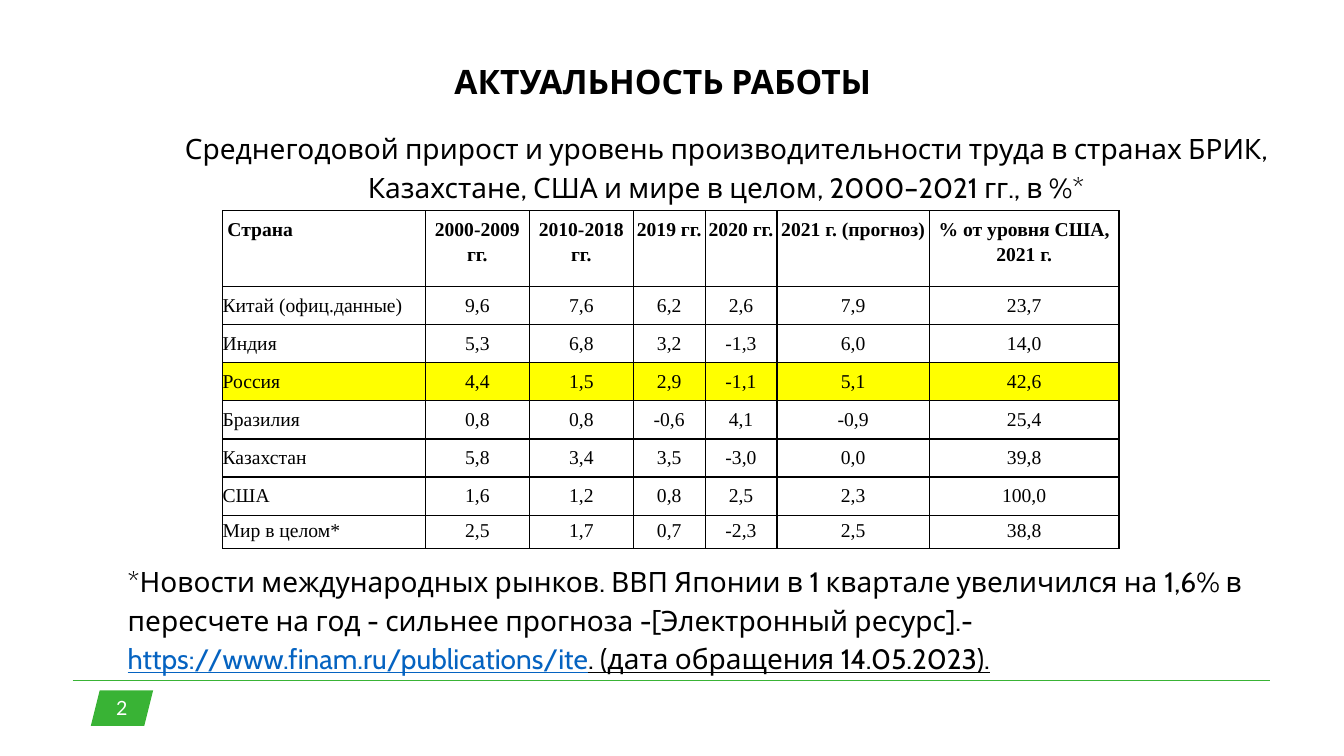
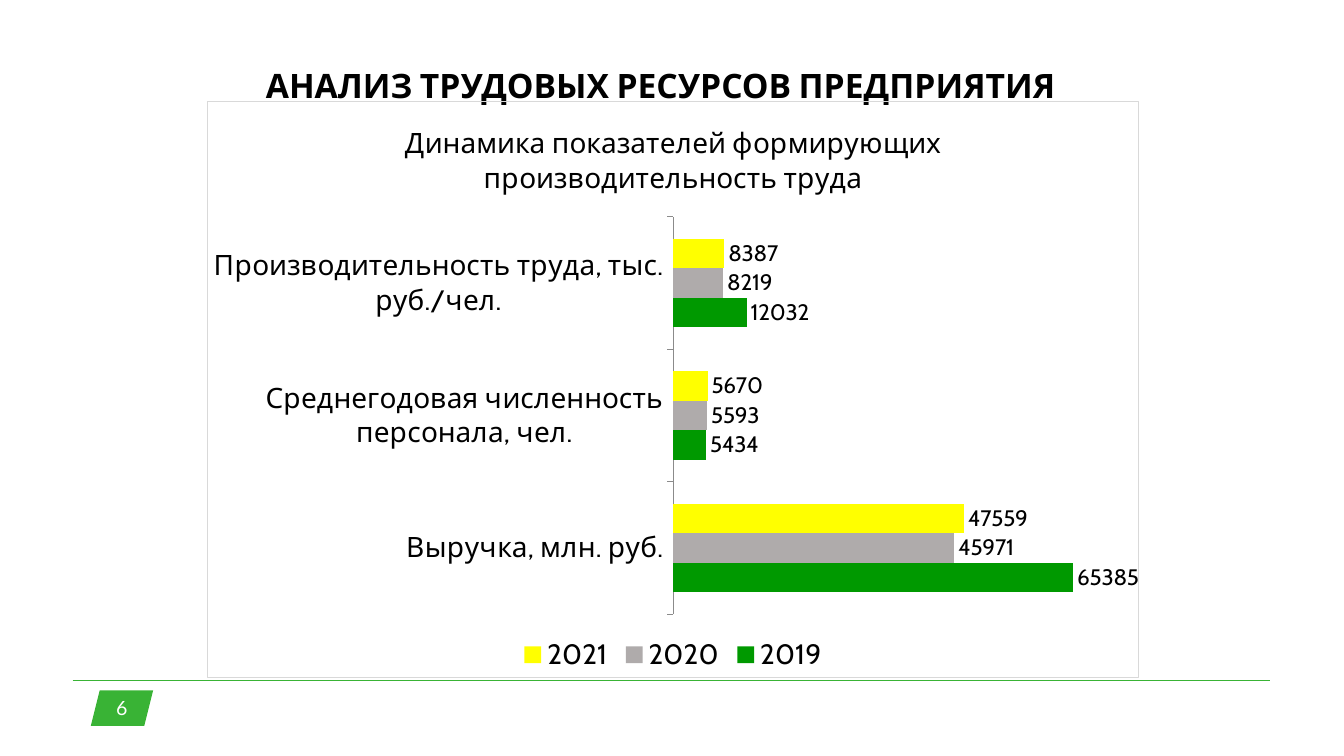
"""Build two slides on labour productivity: a country table and a company bar chart."""
import pptx
import pptx.chart.data
import pptx.dml.color
import pptx.enum.chart
import pptx.enum.shapes
import pptx.enum.text
import pptx.oxml
import pptx.oxml.ns
import pptx.util
from pptx.util import Cm

COLORS = {
    "black": "000000",
    "white": "FFFFFF",
    "green": "39B335",
    "yellow": "FFFF00",
    "link": "0563C1",
    "axis": "8B8B8B",
    "border": "D9D9D9",
    "bar_green": "009900",
    "bar_gray": "AFABAB",
}
FONT = "Cabin"
TABLE_FONT = "Times New Roman"
ALIGN = pptx.enum.text.PP_ALIGN

COLUMN_WIDTHS = [5.11, 2.62, 2.62, 1.81, 1.81, 3.84, 4.78]
ROW_HEIGHTS = [1.91] + [0.96] * 6 + [0.84]
HIGHLIGHTED_COUNTRY = "Россия"
COUNTRY_ROWS = [
    ["Страна", "2000-2009 гг.", "2010-2018 гг.", "2019 гг.", "2020 гг.",
     "2021 г. (прогноз)", "% от уровня США, 2021 г."],
    ["Китай (офиц.данные)", "9,6", "7,6", "6,2", "2,6", "7,9", "23,7"],
    ["Индия", "5,3", "6,8", "3,2", "-1,3", "6,0", "14,0"],
    ["Россия", "4,4", "1,5", "2,9", "-1,1", "5,1", "42,6"],
    ["Бразилия", "0,8", "0,8", "-0,6", "4,1", "-0,9", "25,4"],
    ["Казахстан", "5,8", "3,4", "3,5", "-3,0", "0,0", "39,8"],
    ["США", "1,6", "1,2", "0,8", "2,5", "2,3", "100,0"],
    ["Мир в целом*", "2,5", "1,7", "0,7", "-2,3", "2,5", "38,8"],
]
CATEGORIES = [
    "Выручка, млн. руб.",
    "Среднегодовая численность персонала, чел.",
    "Производительность труда, тыс. руб./чел.",
]
SERIES = [
    ("2019", [65385, 5434, 12032], "bar_green"),
    ("2020", [45971, 5593, 8219], "bar_gray"),
    ("2021", [47559, 5670, 8387], "yellow"),
]


def color(name):
    return pptx.dml.color.RGBColor.from_string(COLORS[name])


def set_font(font, size, name=FONT, tint="black", bold=False, underline=None):
    font.size = pptx.util.Pt(size)
    font.name = name
    font.color.rgb = color(tint)
    font.bold = bold
    font.underline = underline


def add_run(paragraph, text, **font_format):
    run = paragraph.add_run()
    run.text = text
    set_font(run.font, **font_format)


def add_text_box(slide, left, top, width, height, wrap=True):
    frame = slide.shapes.add_textbox(Cm(left), Cm(top), Cm(width), Cm(height)).text_frame
    frame.word_wrap = wrap
    frame.auto_size = pptx.enum.text.MSO_AUTO_SIZE.SHAPE_TO_FIT_TEXT
    return frame.paragraphs[0]


def add_indented_box(slide, left, top, width, height, align):
    paragraph = add_text_box(slide, left, top, width, height)
    paragraph.alignment = align
    paragraph.line_spacing = 1.15
    paragraph.space_after = pptx.util.Pt(10)
    paragraph._p.get_or_add_pPr().set("marL", str(Cm(1.27)))
    return paragraph


def add_title(slide, text, left, top, width):
    add_run(add_text_box(slide, left, top, width, 1.27, wrap=False), text, size=24, bold=True)


def add_footer(slide, number):
    badge = slide.shapes.add_shape(
        pptx.enum.shapes.MSO_SHAPE.PARALLELOGRAM, Cm(2.29), Cm(17.4), Cm(1.57), Cm(0.89))
    badge.shadow.inherit = False
    badge.fill.solid()
    badge.fill.fore_color.rgb = color("green")
    badge.line.fill.background()
    paragraph = add_text_box(slide, 2.36, 17.4, 1.42, 0.84)
    paragraph.alignment = ALIGN.CENTER
    add_run(paragraph, str(number), size=14, name="Lato", tint="white")
    rule = slide.shapes.add_connector(
        pptx.enum.shapes.MSO_CONNECTOR.STRAIGHT, Cm(1.83), Cm(17.15), Cm(32), Cm(17.15))
    rule.line.color.rgb = color("green")
    rule.line.width = pptx.util.Pt(0.75)
    rule._element.spPr.append(pptx.oxml.parse_xml(
        f"<a:effectLst {pptx.oxml.ns.nsdecls('a')}/>"))


def add_slide(presentation, number):
    slide = presentation.slides.add_slide(presentation.slide_layouts[6])
    add_footer(slide, number)
    return slide


def set_borders(cell):
    properties = cell._tc.get_or_add_tcPr()
    for position, side in enumerate(("lnL", "lnR", "lnT", "lnB")):
        properties.insert(position, pptx.oxml.parse_xml(
            f"<a:{side} {pptx.oxml.ns.nsdecls('a')} w='{pptx.util.Pt(0.96)}'>"
            f"<a:solidFill><a:srgbClr val='{COLORS['black']}'/></a:solidFill></a:{side}>"))


def fill_cell(cell, text, header, first, last, highlighted):
    cell.margin_left = Cm(0.12) if header and first else 0
    cell.margin_right = 0
    if highlighted:
        cell.fill.solid()
        cell.fill.fore_color.rgb = color("yellow")
    else:
        cell.fill.background()
    set_borders(cell)
    paragraph = cell.text_frame.paragraphs[0]
    paragraph.alignment = ALIGN.LEFT if first else ALIGN.CENTER
    paragraph.line_spacing = 1.0 if last else 1.15
    add_run(paragraph, text, size=14, name=TABLE_FONT, bold=header)


def add_country_table(slide):
    table = slide.shapes.add_table(
        len(ROW_HEIGHTS), len(COLUMN_WIDTHS), Cm(5.61), Cm(5.31),
        Cm(sum(COLUMN_WIDTHS)), Cm(sum(ROW_HEIGHTS))).table
    table.horz_banding = False
    table.first_row = False
    for column, width in zip(table.columns, COLUMN_WIDTHS):
        column.width = Cm(width)
    for row_index, (values, height) in enumerate(zip(COUNTRY_ROWS, ROW_HEIGHTS)):
        table.rows[row_index].height = Cm(height)
        for column_index, text in enumerate(values):
            fill_cell(
                table.cell(row_index, column_index), text,
                header=row_index == 0,
                first=column_index == 0,
                last=row_index == len(COUNTRY_ROWS) - 1,
                highlighted=values[0] == HIGHLIGHTED_COUNTRY)


def set_chart_frame(chart):
    namespaces = pptx.oxml.ns.nsdecls("c", "a")
    plot_area = chart._chartSpace.chart.plotArea
    for layout in plot_area.findall(pptx.oxml.ns.qn("c:layout")):
        plot_area.remove(layout)
    place = "".join(
        f"<c:{key} val='{value}'/>" for key, value in (
            ("layoutTarget", "inner"), ("xMode", "edge"), ("yMode", "edge"),
            ("x", 0.5), ("y", 0.2), ("w", 0.46), ("h", 0.69)))
    plot_area.insert(0, pptx.oxml.parse_xml(
        f"<c:layout {namespaces}><c:manualLayout>{place}</c:manualLayout></c:layout>"))
    white = f"<a:solidFill><a:srgbClr val='{COLORS['white']}'/></a:solidFill>"
    plot_area.append(pptx.oxml.parse_xml(f"<c:spPr {namespaces}>{white}</c:spPr>"))
    chart._chartSpace.chart.addnext(pptx.oxml.parse_xml(
        f"<c:spPr {namespaces}><a:noFill/><a:ln w='{pptx.util.Pt(0.75)}'><a:solidFill>"
        f"<a:srgbClr val='{COLORS['border']}'/></a:solidFill></a:ln></c:spPr>"))


def format_axes(chart):
    category_axis = chart.category_axis
    category_axis.major_tick_mark = pptx.enum.chart.XL_TICK_MARK.OUTSIDE
    category_axis.format.line.color.rgb = color("axis")
    category_axis.format.line.width = pptx.util.Pt(0.5)
    set_font(category_axis.tick_labels.font, 20)
    value_axis = chart.value_axis
    value_axis.minimum_scale = 0
    value_axis.maximum_scale = 70000
    value_axis.has_major_gridlines = False
    value_axis.visible = False


def format_series(series, tint):
    series.format.fill.solid()
    series.format.fill.fore_color.rgb = color(tint)
    labels = series.data_labels
    labels.show_value = True
    labels.position = pptx.enum.chart.XL_LABEL_POSITION.OUTSIDE_END
    set_font(labels.font, 16)


def add_bar_chart(slide, title):
    data = pptx.chart.data.CategoryChartData()
    data.categories = CATEGORIES
    for name, values, tint in SERIES:
        data.add_series(name, values)
    chart = slide.shapes.add_chart(
        pptx.enum.chart.XL_CHART_TYPE.BAR_CLUSTERED,
        Cm(5.21), Cm(2.54), Cm(23.5), Cm(14.55), data).chart
    set_font(chart.font, 10, name="Arial")
    chart.has_title = True
    add_run(chart.chart_title.text_frame.paragraphs[0], title, size=20)
    chart.has_legend = True
    chart.legend.position = pptx.enum.chart.XL_LEGEND_POSITION.BOTTOM
    chart.legend.include_in_layout = False
    set_font(chart.legend.font, 20)
    plot = chart.plots[0]
    plot.gap_width = 150
    plot.vary_by_categories = False
    for series, (name, values, tint) in zip(plot.series, SERIES):
        format_series(series, tint)
    format_axes(chart)
    set_chart_frame(chart)


def build_relevance_slide(presentation):
    slide = add_slide(presentation, 2)
    add_title(slide, "АКТУАЛЬНОСТЬ РАБОТЫ", 11.2, 1.4, 11.46)
    caption = add_indented_box(slide, 2.36, 3.07, 30.61, 2.18, ALIGN.CENTER)
    add_run(caption, "Среднегодовой прирост и уровень производительности труда в странах "
            "БРИК, Казахстане, США и мире в целом, 2000–2021 гг., в %*", size=20)
    add_country_table(slide)
    note = add_indented_box(slide, 1.7, 13.97, 30.61, 3.18, ALIGN.LEFT)
    add_run(note, "*Новости международных рынков. ВВП Японии в 1 квартале увеличился на 1,6% "
            "в пересчете на год - сильнее прогноза -[Электронный ресурс].- ", size=20)
    add_run(note, "https://www.finam.ru/publications/ite", size=20, tint="link", underline=True)
    add_run(note, ". (дата обращения 14.05.2023).", size=20, underline=True)


def build_resources_slide(presentation):
    slide = add_slide(presentation, 6)
    add_title(slide, "АНАЛИЗ ТРУДОВЫХ РЕСУРСОВ ПРЕДПРИЯТИЯ", 6.45, 1.5, 20.98)
    add_bar_chart(slide, "Динамика показателей формирующих производительность труда")


def main():
    presentation = pptx.Presentation()
    presentation.slide_width = Cm(33.87)
    presentation.slide_height = Cm(19.05)
    build_relevance_slide(presentation)
    build_resources_slide(presentation)
    presentation.save("out.pptx")


if __name__ == "__main__":
    main()
